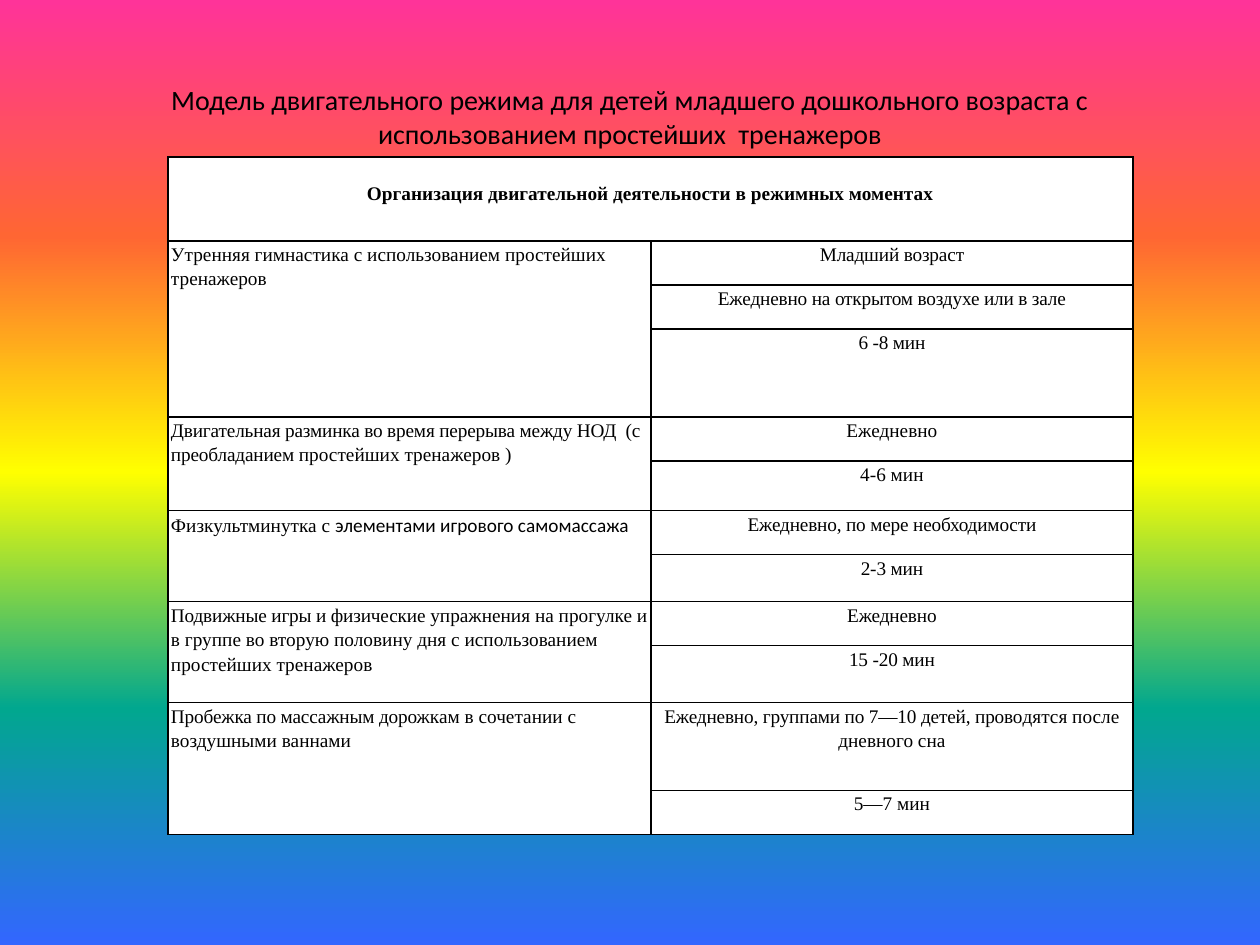
import pptx
import pptx.util
import pptx.dml.color
import pptx.enum.text
import pptx.oxml
import pptx.oxml.ns

# Content: each run is (text, style); each group is (left runs, right cells)
TITLE = ("Модель двигательного режима для детей младшего дошкольного "
         "возраста с использованием простейших  тренажеров")
HEAD = "Организация двигательной деятельности в режимных моментах"
GROUPS = [
    ([("Утренняя гимнастика с использованием простейших тренажеров", "plain")],
     [[("Младший возраст", "tight")],
      [("Ежедневно на открытом воздухе или в зале", "tight")],
      [("6 -8 мин", "tight")]]),
    ([("Двигательная разминка во время перерыва между НОД  (с преобладанием ", "tight"),
      ("простейших тренажеров )", "plain")],
     [[("Ежедневно", "plain")], [("4-6 мин", "plain")]]),
    ([("Физкультминутка с ", "plain"),
      ("элементами игрового самомассажа", "sans")],
     [[("Ежедневно, по мере необходимости", "tight")],
      [("2-3 мин", "tight")]]),
    ([("Подвижные игры и физические ", "tight"),
      ("упражнения на прогулке и в группе во вторую половину дня "
       "с использованием простейших тренажеров", "plain")],
     [[("Ежедневно", "tight")], [("15 -20 мин", "tight")]]),
    ([("Пробежка по массажным дорож", "tight"),
      ("кам в сочетании с воздушными ваннами", "plain")],
     [[("Ежедневно, группами по 7—10 детей, прово", "tight"),
       ("дятся после дневного сна", "plain")],
      [("5—7 мин", "plain")]]),
]

# Lengths in px
SCALE = 914400 // 126
PAGE = (1260, 945)
TITLE_BOX = (63, 38, 1134, 157)
GRID = (168, 157)
COLS = [483, 482]
ROWS = [84, 44, 44, 88, 44, 50, 44, 47, 44, 57, 88, 44]
PAD, DROP = 3, 23

THEME = {
    "sans": "Calibri", "serif": "Times New Roman",
    "title": 16, "body": 11, "lead": 1.15, "line": 1, "spc": -10,
    "ink": "000000", "cell": "FFFFFF",
    "sky": [(0, "FF3399"), (25, "FF6633"), (50, "FFFF00"),
            (75, "01A78F"), (100, "3366FF")],
}
ALIGN = pptx.enum.text.PP_ALIGN
NS = pptx.oxml.ns.nsdecls("a", "p")


def px(n):
    return pptx.util.Emu(n * SCALE)


def rgb(key):
    return pptx.dml.color.RGBColor.from_string(THEME[key])


def add_run(para, text, face, size, bold=False):
    run = para.add_run()
    run.text = text
    run.font.name = THEME[face]
    run.font.size = pptx.util.Pt(THEME[size])
    run.font.bold = bold
    run.font.color.rgb = rgb("ink")
    return run


def paint(slide):
    stops = "".join(f'<a:gs pos="{at * 1000}"><a:srgbClr val="{tone}"/></a:gs>'
                    for at, tone in THEME["sky"])
    back = pptx.oxml.parse_xml(
        f'<p:bg {NS}><p:bgPr><a:gradFill><a:gsLst>{stops}</a:gsLst>'
        '<a:lin ang="5400000" scaled="0"/></a:gradFill><a:effectLst/></p:bgPr></p:bg>')
    slide.element.cSld.insert(0, back)


def frame(cell):
    props = cell._tc.get_or_add_tcPr()
    for side in "LRTB":
        props.append(pptx.oxml.parse_xml(
            f'<a:ln{side} {NS} w="{THEME["line"] * 12700}"><a:solidFill>'
            f'<a:srgbClr val="{THEME["ink"]}"/></a:solidFill></a:ln{side}>'))
    cell.fill.solid()
    cell.fill.fore_color.rgb = rgb("cell")
    cell.margin_left = cell.margin_right = px(PAD)
    cell.margin_top = cell.margin_bottom = 0


def write(cell, runs, align, bold=False):
    para = cell.text_frame.paragraphs[0]
    para.alignment = align
    para.line_spacing = THEME["lead"]
    for text, style in runs:
        face = "sans" if style == "sans" else "serif"
        run = add_run(para, text, face, "body", bold)
        if style == "tight":
            run.font._element.set("spc", str(THEME["spc"]))


def main():
    deck = pptx.Presentation()
    deck.slide_width, deck.slide_height = map(px, PAGE)
    slide = deck.slides.add_slide(deck.slide_layouts[5])
    paint(slide)

    # Title
    title = slide.shapes.title
    title.left, title.top, title.width, title.height = map(px, TITLE_BOX)
    title.text_frame.vertical_anchor = pptx.enum.text.MSO_ANCHOR.MIDDLE
    para = title.text_frame.paragraphs[0]
    para.alignment = ALIGN.CENTER
    add_run(para, TITLE, "sans", "title")

    # Table grid
    table = slide.shapes.add_table(len(ROWS), len(COLS), *map(px, GRID),
                                   px(sum(COLS)), px(sum(ROWS))).table
    table.first_row = table.horz_banding = False
    for col, size in zip(table.columns, COLS):
        col.width = px(size)
    for row, size in zip(table.rows, ROWS):
        row.height = px(size)
    for cell in table.iter_cells():
        frame(cell)

    # Heading row
    head = table.cell(0, 0)
    head.merge(table.cell(0, 1))
    head.margin_top = px(DROP)
    write(head, [(HEAD, "plain")], ALIGN.CENTER, True)

    # One merged left cell per group, its details on the right
    top = 1
    for left, cells in GROUPS:
        first = table.cell(top, 0)
        first.merge(table.cell(top + len(cells) - 1, 0))
        write(first, left, ALIGN.LEFT)
        for step, runs in enumerate(cells):
            write(table.cell(top + step, 1), runs, ALIGN.CENTER)
        top += len(cells)

    deck.save("out.pptx")


if __name__ == "__main__":
    main()
